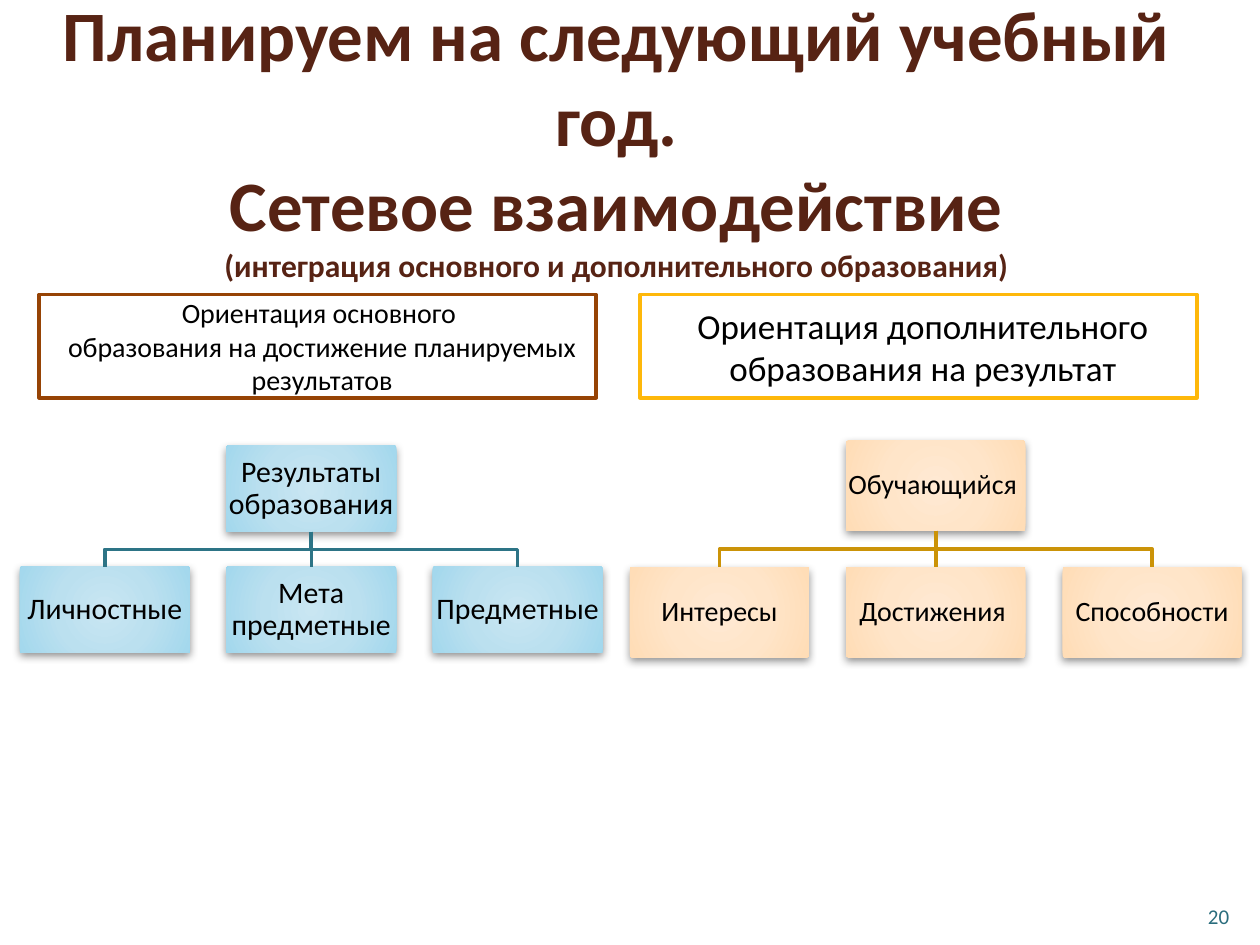
from dataclasses import dataclass

from pptx import Presentation
from pptx.dml.color import RGBColor
from pptx.enum.shapes import MSO_CONNECTOR, MSO_SHAPE
from pptx.enum.text import MSO_ANCHOR as Anchor, PP_ALIGN as Align
from pptx.oxml import parse_xml
from pptx.oxml.ns import nsdecls
from pptx.util import Cm, Pt


@dataclass(frozen=True)
class Theme:
    font: str = "Calibri"
    title: str = "572314"
    text: str = "000000"
    paper: str = "FFFFFF"
    number: str = "2A6D7D"
    brown: str = "964305"
    amber: str = "FEB80A"
    teal_line: str = "2D7486"
    gold_line: str = "CB9308"
    blue: tuple = ("C9E6F2", "BBE0EF", "A4D8ED", "9BD7EE")
    peach: tuple = ("FFE9D3", "FFE5C9", "FFDDB7", "FFDBB2")
    title_size: float = 40.5
    subtitle_size: float = 18
    number_size: float = 12


T = Theme()
rgb = RGBColor.from_string


def write(tf, lines, color=T.text, bold=False, anchor=Anchor.MIDDLE, inset=None):
    """Fill a frame with one centred paragraph of (text, size) lines."""
    tf.word_wrap = True
    tf.vertical_anchor = anchor
    if inset is not None:
        tf.margin_left = tf.margin_right = tf.margin_top = tf.margin_bottom = inset
    p = tf.paragraphs[0]
    p.alignment = Align.CENTER
    for i, (text, size) in enumerate(lines):
        if i:
            p.add_line_break()
        r = p.add_run()
        r.text = text
        r.font.name, r.font.size, r.font.bold = T.font, Pt(size), bold
        r.font.color.rgb = rgb(color)
    return p


def add_node(x, y, w, h, text, size, colors):
    sp = s.shapes.add_shape(MSO_SHAPE.RECTANGLE, x, y, w, h)
    sp.line.fill.background()
    stops = "".join(
        f'<a:gs pos="{pos * 1000}"><a:srgbClr val="{color}"/></a:gs>'
        for pos, color in zip((0, 50, 97, 100), colors))
    spPr = sp._element.spPr
    spPr.prstGeom.addnext(parse_xml(
        f'<a:gradFill {nsdecls("a")} rotWithShape="1"><a:gsLst>{stops}</a:gsLst>'
        '<a:path path="circle"><a:fillToRect l="50000" t="50000" r="50000" b="50000"/>'
        '</a:path></a:gradFill>'))
    spPr.append(parse_xml(
        f'<a:effectLst {nsdecls("a")}><a:outerShdw blurRad="{Pt(5)}" dist="{Pt(2)}" '
        'dir="5400000" rotWithShape="0"><a:srgbClr val="000000"><a:alpha val="43000"/>'
        '</a:srgbClr></a:outerShdw></a:effectLst>'))
    p = write(sp.text_frame, [(text, size)], inset=Cm(0.03))
    p.line_spacing = 0.9
    return sp


prs = Presentation()
prs.slide_width, prs.slide_height = Cm(25.4), Cm(19.05)
s = prs.slides.add_slide(prs.slide_layouts[6])

# Title
title = s.shapes.add_textbox(Cm(1), Cm(0.58), Cm(22.86), Cm(4.37))
write(title.text_frame, [
    ("Планируем на следующий учебный год.", T.title_size),
    ("Сетевое взаимодействие", T.title_size),
    ("(интеграция основного и дополнительного образования)", T.subtitle_size),
], T.title, bold=True)

# Column headings
headings = [
    (Cm(0.79), T.brown, 16, ["Ориентация основного ",
                             "образования на достижение планируемых результатов"]),
    (Cm(12.9), T.amber, 20, ["Ориентация дополнительного образования на результат"]),
]
for x, border, size, lines in headings:
    sp = s.shapes.add_shape(MSO_SHAPE.RECTANGLE, x, Cm(5.94), Cm(11.23), Cm(2.08))
    sp.shadow.inherit = False
    sp.fill.solid()
    sp.fill.fore_color.rgb = rgb(T.paper)
    sp.line.color.rgb = rgb(border)
    sp.line.width = Pt(2)
    p = write(sp.text_frame, [(line, size) for line in lines])
    p.space_before = Pt(1)
    p._p.get_or_add_pPr().set("marL", str(Cm(0.18)))

# Trees: left, pitch, node width and height, root top, leaf top
trees = [
    (Cm(0.4), Cm(4.16), Cm(3.43), Cm(1.73), Cm(8.99), Cm(11.43), 17, T.blue, T.teal_line,
     "Результаты образования", ["Личностные", "Мета предметные", "Предметные"]),
    (Cm(12.7), Cm(4.36), Cm(3.61), Cm(1.81), Cm(8.89), Cm(11.44), 16, T.peach, T.gold_line,
     "Обучающийся ", ["Интересы", "Достижения ", "Способности"]),
]
for left, pitch, w, h, root_y, leaf_y, size, colors, line_color, root_text, leaf_texts in trees:
    root = add_node(left + pitch, root_y, w, h, root_text, size, colors)
    leaves = [add_node(left + i * pitch, leaf_y, w, h, text, size, colors)
              for i, text in enumerate(leaf_texts)]
    center, bottom = left + pitch + w // 2, root_y + h
    middle = (bottom + leaf_y) // 2

    stem = s.shapes.add_connector(MSO_CONNECTOR.STRAIGHT, center, bottom, center, leaf_y)
    stem.begin_connect(root, 2)
    stem.end_connect(leaves[1], 0)
    stem._element.spPr.append(parse_xml(f'<a:effectLst {nsdecls("a")}/>'))
    branches = [stem]
    for end in (center - pitch, center + pitch):
        path = s.shapes.build_freeform(center, bottom)
        path.add_line_segments([(center, middle), (end, middle), (end, leaf_y)], close=False)
        branch = path.convert_to_shape()
        branch.shadow.inherit = False
        branch.fill.background()
        branches.append(branch)
    for branch in branches:
        branch.line.color.rgb = rgb(line_color)
        branch.line.width = Pt(2)

# Slide number
number = s.shapes.add_textbox(Cm(23.93), Cm(17.53), Cm(1.27), Cm(1.32))
write(number.text_frame, [("20", T.number_size)], T.number, anchor=Anchor.BOTTOM)

prs.save("out.pptx")
